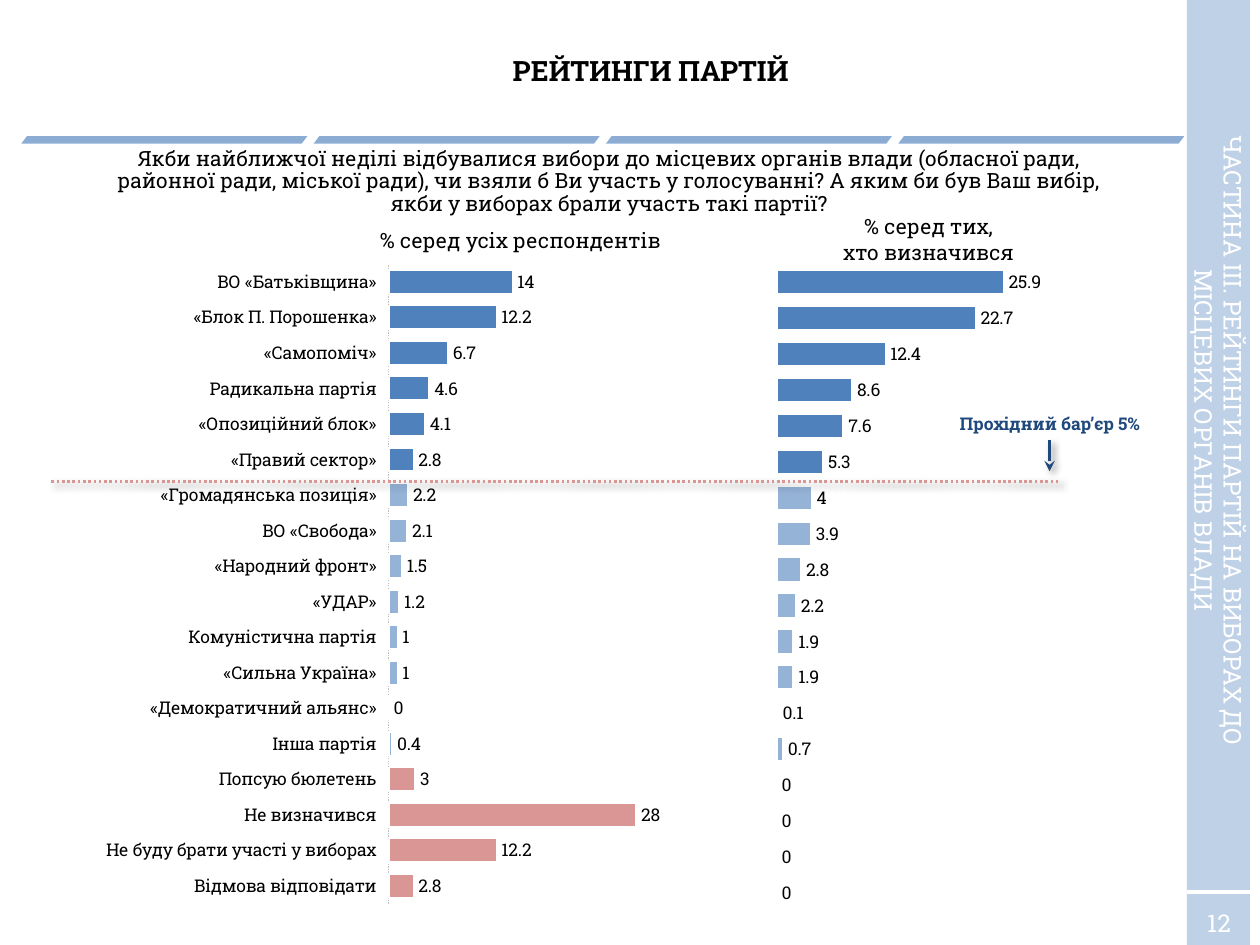
from dataclasses import dataclass

from lxml import etree
from pptx import Presentation
from pptx.chart.data import CategoryChartData
from pptx.dml.color import RGBColor
from pptx.enum.chart import XL_CHART_TYPE, XL_LABEL_POSITION, XL_TICK_LABEL_POSITION, XL_TICK_MARK
from pptx.enum.dml import MSO_LINE
from pptx.enum.shapes import MSO_CONNECTOR, MSO_SHAPE
from pptx.enum.text import MSO_ANCHOR, PP_ALIGN
from pptx.oxml import parse_xml
from pptx.oxml.ns import nsdecls, qn
from pptx.util import Inches, Pt

BAR_CLUSTERED = XL_CHART_TYPE.BAR_CLUSTERED
OUTSIDE_END = XL_LABEL_POSITION.OUTSIDE_END
LOW = XL_TICK_LABEL_POSITION.LOW
NO_TICKS = XL_TICK_MARK.NONE
DOTTED = MSO_LINE.ROUND_DOT
STRAIGHT = MSO_CONNECTOR.STRAIGHT
RECTANGLE, PARALLELOGRAM = MSO_SHAPE.RECTANGLE, MSO_SHAPE.PARALLELOGRAM
TOP, MIDDLE = MSO_ANCHOR.TOP, MSO_ANCHOR.MIDDLE
CENTER = PP_ALIGN.CENTER


@dataclass(frozen=True)
class Theme:
    font: str = "Roboto Slab"
    chart_font: str = "Calibri"
    black: str = "000000"
    white: str = "FFFFFF"
    blue: str = "4F81BD"
    pale_blue: str = "95B3D7"
    navy: str = "1F497D"
    red: str = "D99694"
    grey: str = "BFBFBF"
    title: int = 16
    section: int = 14
    body: int = 12
    label: int = 10
    chart: int = 18


THEME = Theme()
TITLE = "РЕЙТИНГИ ПАРТІЙ"
QUESTION = (
    "Якби найближчої неділі відбувалися вибори до місцевих органів влади "
    "(обласної ради, районної ради, міської ради), чи взяли б Ви участь у "
    "голосуванні? А яким би був Ваш вибір, якби у виборах брали участь такі партії?"
)
SECTION = "ЧАСТИНА ІІI. РЕЙТИНГИ ПАРТІЙ НА ВИБОРАХ ДО МІСЦЕВИХ ОРГАНІВ ВЛАДИ"
RATINGS = [
    ("Відмова відповідати", 2.8, 0),
    ("Не буду брати участі у виборах", 12.2, 0),
    ("Не визначився", 28, 0),
    ("Попсую бюлетень", 3, 0),
    ("Інша партія", 0.4, 0.7),
    ("«Демократичний альянс»", 0, 0.1),
    ("«Сильна Україна»", 1, 1.9),
    ("Комуністична партія", 1, 1.9),
    ("«УДАР»", 1.2, 2.2),
    ("«Народний фронт»", 1.5, 2.8),
    ("ВО «Свобода»", 2.1, 3.9),
    ("«Громадянська позиція»", 2.2, 4),
    ("«Правий сектор»", 2.8, 5.3),
    ("«Опозиційний блок»", 4.1, 7.6),
    ("Радикальна партія", 4.6, 8.6),
    ("«Самопоміч»", 6.7, 12.4),
    ("«Блок П. Порошенка»", 12.2, 22.7),
    ("ВО «Батьківщина»", 14, 25.9),
]
NON_PARTY_COUNT = 4
PASSING_START = 12


def rgb(color):
    return RGBColor.from_string(color)


def style_font(font, size, color=THEME.black, bold=False, name=THEME.font):
    font.name = name
    font.size = Pt(size)
    font.bold = bold
    font.color.rgb = rgb(color)


def write(box, lines, size, color=THEME.black, bold=False, anchor=MIDDLE, spacing=None):
    frame = box.text_frame
    frame.word_wrap = True
    frame.vertical_anchor = anchor
    for index, line in enumerate(lines):
        paragraph = frame.paragraphs[0] if index == 0 else frame.add_paragraph()
        paragraph.alignment = CENTER
        paragraph.space_before = Pt(size * 0.2 if index else 0)
        if spacing:
            paragraph.line_spacing = spacing
        run = paragraph.add_run()
        run.text = line
        style_font(run.font, size, color, bold)


def place(box, left, top, width, height):
    box.left, box.top = Inches(left), Inches(top)
    box.width, box.height = Inches(width), Inches(height)


def fill_placeholder(placeholder, area, text, size, bold=False, spacing=None):
    place(placeholder, *area)
    write(placeholder, [text], size, bold=bold, spacing=spacing)
    properties = placeholder.text_frame.paragraphs[0]._p.get_or_add_pPr()
    properties.set("marL", "0")
    properties.set("indent", "0")
    etree.SubElement(properties, qn("a:buNone"))


def add_label(slide, area, lines, size, **style):
    label = slide.shapes.add_textbox(*map(Inches, area))
    write(label, lines, size, **style)
    return label


def add_tint(slide, preset, area, color, opacity):
    tint = slide.shapes.add_shape(preset, *map(Inches, area))
    tint.shadow.inherit = False
    tint.line.fill.background()
    tint.fill.solid()
    tint.fill.fore_color.rgb = rgb(color)
    color_node = tint.fill._xPr.find(".//" + qn("a:srgbClr"))
    etree.SubElement(color_node, qn("a:alpha"), val=str(opacity * 1000))
    return tint


def add_line(slide, start, end, color, width, dash=None, arrow=False, shadow=False):
    line = slide.shapes.add_connector(STRAIGHT, *map(Inches, (*start, *end)))
    line.line.color.rgb = rgb(color)
    line.line.width = Pt(width)
    if dash:
        line.line.dash_style = dash
    if arrow:
        etree.SubElement(line.line._get_or_add_ln(), qn("a:tailEnd"), type="stealth")
    effects = etree.SubElement(line._element.spPr, qn("a:effectLst"))
    if shadow:
        outer = etree.SubElement(
            effects, qn("a:outerShdw"), blurRad=str(Pt(4)), dist=str(Pt(3)),
            dir="2700000", algn="tl", rotWithShape="0",
        )
        shade = etree.SubElement(outer, qn("a:srgbClr"), val=THEME.black)
        etree.SubElement(shade, qn("a:alpha"), val="40000")


def set_plot_area(chart, x, y, width, height):
    plot_area = chart._chartSpace.chart.plotArea
    for layout in plot_area.findall(qn("c:layout")):
        plot_area.remove(layout)
    plot_area.insert(0, parse_xml(
        f'<c:layout {nsdecls("c")}><c:manualLayout><c:layoutTarget val="inner"/>'
        f'<c:xMode val="edge"/><c:yMode val="edge"/><c:x val="{x}"/><c:y val="{y}"/>'
        f'<c:w val="{width}"/><c:h val="{height}"/></c:manualLayout></c:layout>'
    ))


def add_rating_chart(slide, area, categories, values, plot_width, point_colors, named):
    data = CategoryChartData()
    data.categories = categories
    data.add_series("Series 1", values)
    chart = slide.shapes.add_chart(BAR_CLUSTERED, *map(Inches, area), data).chart
    chart.has_legend = chart.has_title = False
    style_font(chart.font, THEME.chart, name=THEME.chart_font)
    set_plot_area(chart, 0.457, 0.018, plot_width, 0.949)

    scale = chart.value_axis
    scale.minimum_scale, scale.maximum_scale = 0, 45
    scale.has_major_gridlines = False
    scale.visible = False
    parties = chart.category_axis
    parties.visible = named
    if named:
        parties.tick_label_position = LOW
        parties.major_tick_mark = parties.minor_tick_mark = NO_TICKS
        style_font(parties.tick_labels.font, THEME.label)
        parties.format.line.color.rgb = rgb(THEME.grey)
        parties.format.line.width = Pt(0.75)
        parties.format.line.dash_style = DOTTED

    plot = chart.plots[0]
    plot.gap_width = 50
    plot.vary_by_categories = False
    series = plot.series[0]
    for index, color in enumerate(point_colors):
        for bar in ([series] if index == 0 else []) + [series.points[index]]:
            bar.format.fill.solid()
            bar.format.fill.fore_color.rgb = rgb(color)
            bar.format.line.color.rgb = rgb(THEME.white)
            bar.format.line.width = Pt(1)
    plot.has_data_labels = True
    labels = plot.data_labels
    labels.show_value = True
    labels.position = OUTSIDE_END
    style_font(labels.font, THEME.label)


def add_frame(slide):
    add_tint(slide, RECTANGLE, (9.42, 0, 0.5, 7.5), THEME.pale_blue, 60)
    for column in range(4):
        band = add_tint(slide, PARALLELOGRAM, (0.17 + 2.32 * column, 1.08, 2.27, 0.06), THEME.blue, 65)
        band.adjustments[0] = 0.75
    add_label(slide, (9.38, 7.15, 0.59, 0.34), ["12"], THEME.section, color=THEME.white)
    add_line(slide, (9.42, 7.08), (9.92, 7.08), THEME.white, 2)


def main():
    deck = Presentation()
    deck.slide_width, deck.slide_height = Inches(10), Inches(7.5)
    slide = deck.slides.add_slide(deck.slide_layouts[1])
    add_frame(slide)

    names, all_voters, decided = zip(*RATINGS)
    failing = [THEME.pale_blue] * (PASSING_START - NON_PARTY_COUNT)
    passing = [THEME.blue] * (len(RATINGS) - PASSING_START)
    ranks = [str(rank) for rank in range(1, len(RATINGS) + 1)]
    decided_colors = [THEME.pale_blue] * NON_PARTY_COUNT + failing + passing
    all_colors = [THEME.red] * NON_PARTY_COUNT + failing + passing
    add_rating_chart(slide, (3.08, 2, 6.75, 5.41), ranks, decided, 0.464, decided_colors, False)
    add_rating_chart(slide, (0, 2, 6.75, 5.35), names, all_voters, 0.468, all_colors, True)

    title, question = slide.placeholders
    fill_placeholder(title, (1, 0.18, 8.33, 0.75), TITLE, THEME.title, bold=True)
    fill_placeholder(question, (0.67, 1.17, 8.33, 0.55), QUESTION, THEME.body, spacing=0.9)
    add_label(slide, (2.84, 1.71, 2.58, 0.42), ["% серед усіх респондентів"], THEME.body, spacing=0.9)
    add_label(slide, (6.08, 1.7, 2.58, 0.42), ["% серед тих,", "хто визначився"], THEME.body, spacing=0.9)

    add_line(slide, (8.33, 3.49), (8.33, 3.74), THEME.navy, 2, arrow=True, shadow=True)
    add_label(slide, (7.37, 3.23, 1.92, 0.27), ["Прохідний бар’єр 5%"], THEME.label,
              color=THEME.navy, bold=True, anchor=TOP)
    section = add_label(slide, (6.92, 3.21, 5.5, 0.57), [SECTION], THEME.section,
                        color=THEME.white, anchor=TOP)
    section.rotation = 90
    add_line(slide, (8.4, 3.82), (0.4, 3.82), THEME.red, 1.5, dash=DOTTED, shadow=True)
    deck.save("out.pptx")


if __name__ == "__main__":
    main()
